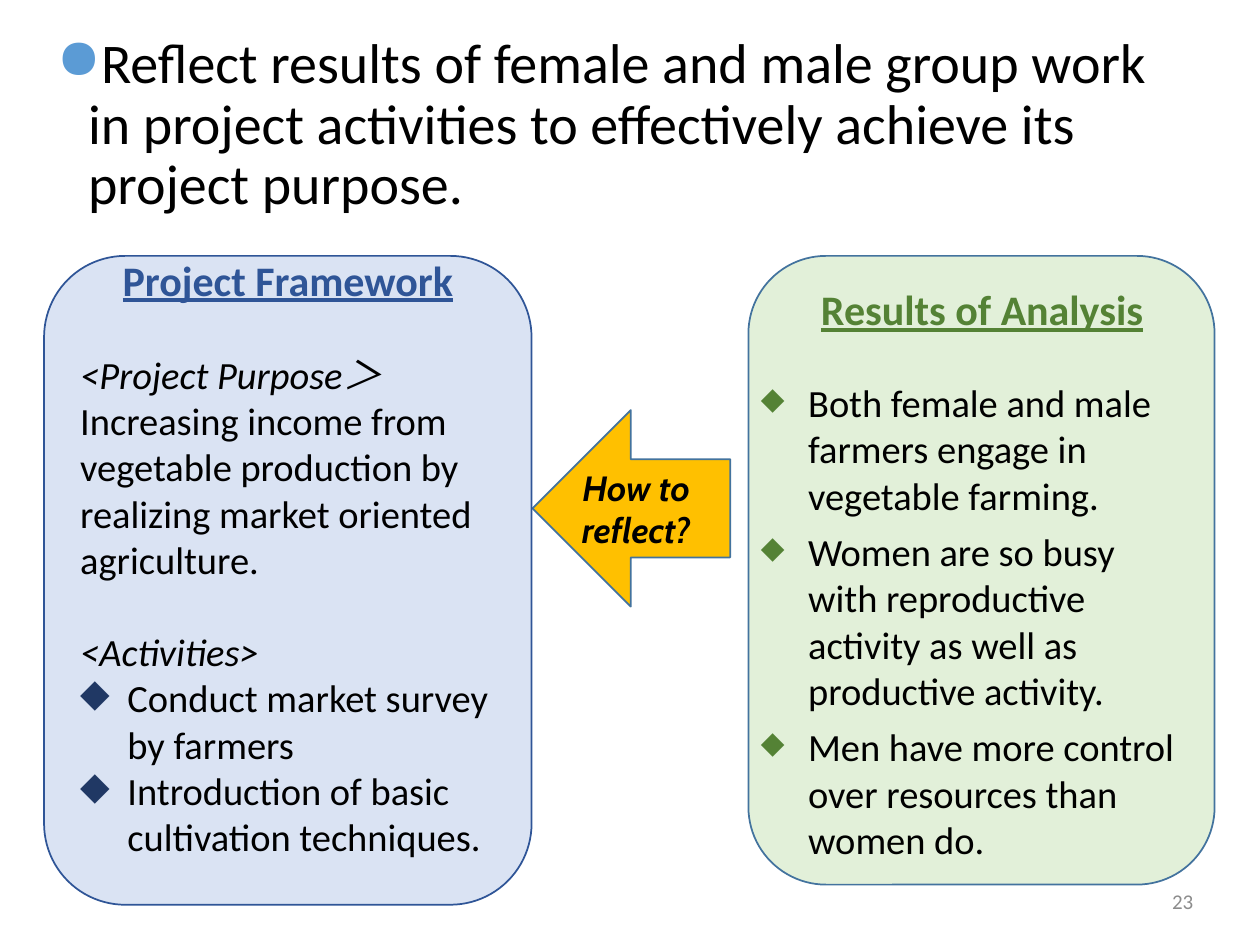
import pptx
import pptx.dml.color
import pptx.enum.shapes
import pptx.enum.text
import pptx.oxml
import pptx.util
from lxml import etree

Pt = pptx.util.Pt
SHAPES = pptx.enum.shapes.MSO_SHAPE
ALIGN = pptx.enum.text.PP_ALIGN
ANCHOR = pptx.enum.text.MSO_ANCHOR
DRAWING = "http://schemas.openxmlformats.org/drawingml/2006/main"


def color(value):
    return pptx.dml.color.RGBColor.from_string(value)


def write(frame, text, size, ink="000000", font="Calibri", bold=False, italic=False,
          underline=False, align=ALIGN.LEFT, before=0, bullet=None, indent=27, scale=100):
    """Add a paragraph; bullet is a (character, colour) pair."""
    frame.word_wrap = True
    para = frame.paragraphs[0]
    if para.runs:
        para = frame.add_paragraph()
    para.add_run().text = text
    para.alignment = align
    para.space_before = Pt(before)
    if bullet:
        character, tint = bullet
        properties = para._p.get_or_add_pPr()
        properties.set("marL", str(Pt(indent)))
        properties.set("indent", str(-Pt(indent)))
        for part in (
            f'<a:buClr xmlns:a="{DRAWING}"><a:srgbClr val="{tint}"/></a:buClr>',
            f'<a:buSzPct xmlns:a="{DRAWING}" val="{scale * 1000}"/>',
            f'<a:buChar xmlns:a="{DRAWING}" char="{character}"/>',
        ):
            properties.append(etree.fromstring(part, pptx.oxml.oxml_parser))
    para.font.name = font
    para.font.size = Pt(size)
    para.font.bold = bold
    para.font.italic = italic
    para.font.underline = underline
    para.font.color.rgb = color(ink)
    return para


deck = pptx.Presentation()
deck.slide_width, deck.slide_height = Pt(720), Pt(540)
page = deck.slides.add_slide(deck.slide_layouts[6])

# Slide number
number_box = page.shapes.add_textbox(Pt(527), Pt(500.4), Pt(162), Pt(28.8))
number_box.text_frame.vertical_anchor = ANCHOR.MIDDLE
write(number_box.text_frame, "23", 12, "8C8C8C", align=ALIGN.RIGHT)

# Main message
message_box = page.shapes.add_textbox(Pt(25.2), Pt(16.6), Pt(663.1), Pt(209.5))
message = write(
    message_box.text_frame,
    "Reflect results of female and male group work in project activities "
    "to effectively achieve its project purpose.",
    32, before=10, bullet=("●", "5B9BD5"), indent=18)
message.line_spacing = 0.9

# Arrow and the two panels
panels = []
for kind, left, top, width, height, fill, line in (
    (SHAPES.DOWN_ARROW, 304.6, 234, 112.3, 113, "FFC000", "43739E"),
    (SHAPES.ROUNDED_RECTANGLE, 25.2, 146.2, 278.6, 370.8, "DAE3F3", "2F5597"),
    (SHAPES.ROUNDED_RECTANGLE, 427.7, 146.2, 266.4, 359.3, "E2F0D9", "43739E"),
):
    shape = page.shapes.add_shape(kind, Pt(left), Pt(top), Pt(width), Pt(height))
    shape.shadow.inherit = False
    shape.fill.solid()
    shape.fill.fore_color.rgb = color(fill)
    shape.line.color.rgb = color(line)
    shape.line.width = Pt(1)
    panels.append(shape)
arrow, framework, analysis = panels
arrow.rotation = 90

# Arrow caption
caption_box = page.shapes.add_textbox(Pt(289.4), Pt(262.8), Pt(141.8), Pt(55.4))
caption = write(caption_box.text_frame, "How to reflect?", 20, font="Cabin",
                bold=True, italic=True, align=ALIGN.CENTER)
caption._p.get_or_add_pPr().set("marL", str(Pt(6.5)))

# Project framework
frame = framework.text_frame
frame.vertical_anchor = ANCHOR.MIDDLE
frame.margin_bottom = Pt(30.5)
write(frame, "Project Framework", 24, "2F5597", bold=True, underline=True, align=ALIGN.CENTER)
write(frame, "<Project Purpose＞", 22, italic=True, before=26.5)
write(frame, "Increasing income from vegetable production by realizing "
             "market oriented agriculture.", 22)
write(frame, "<Activities>", 22, italic=True, before=26.5)
for activity in ("Conduct market survey by farmers",
                 "Introduction of basic cultivation techniques."):
    write(frame, activity, 22, bullet=("◆", "203864"))

# Results of analysis
results_box = page.shapes.add_textbox(Pt(427.7), Pt(213.1), Pt(260.6), Pt(277.2))
for result in (
    "Both female and male farmers engage in vegetable farming.",
    "Women are so busy with reproductive activity as well as productive activity.",
    "Men have more control over resources than women do.",
):
    write(results_box.text_frame, result, 22, before=6, bullet=("◆", "548235"), scale=80)
heading_box = page.shapes.add_textbox(Pt(460.8), Pt(158.4), Pt(200.9), Pt(42.5))
write(heading_box.text_frame, "Results of Analysis", 24, "548235", bold=True,
      underline=True, align=ALIGN.CENTER, before=6)

deck.save("out.pptx")
